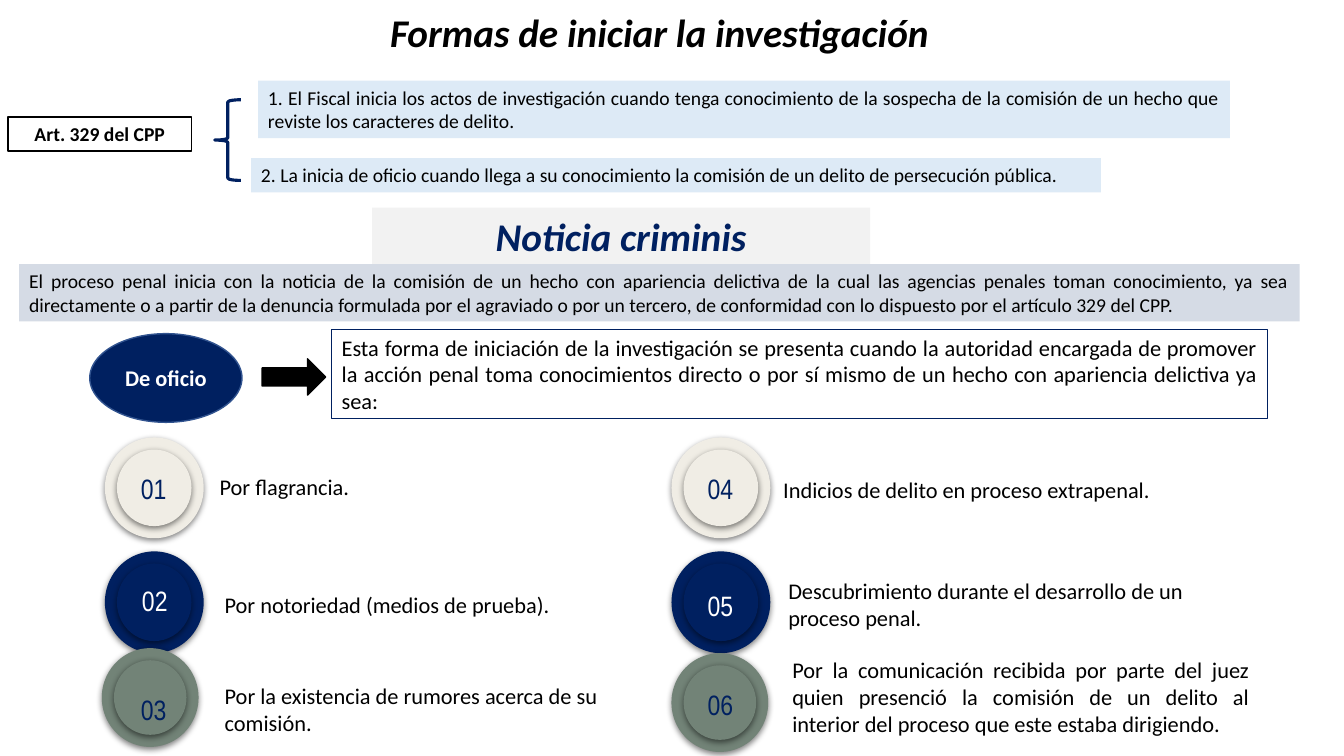
import pptx
import pptx.util
import pptx.dml.color
import pptx.enum.shapes
import pptx.enum.text
import pptx.oxml
import pptx.oxml.ns

Inches = pptx.util.Inches
SHAPE = pptx.enum.shapes.MSO_SHAPE
ALIGN = pptx.enum.text.PP_ALIGN
ANCHOR = pptx.enum.text.MSO_ANCHOR

COLORS = {
    "navy": "002060", "black": "000000", "white": "FFFFFF", "gray": "F2F2F2",
    "steel": "D5DBE5", "sky": "DDEAF6", "rim": "31538F", "cream": "F0EDE5",
    "sage": "728377",
}
BODY = {"name": "Calibri", "size": pptx.util.Pt(14)}
LARGE = {"name": "Calibri", "size": pptx.util.Pt(16)}
HEADING = {"name": "Calibri", "size": pptx.util.Pt(28), "bold": True, "italic": True}
NUMBER = {"name": "Arial Narrow", "size": pptx.util.Pt(20)}


def rgb(name):
    return pptx.dml.color.RGBColor.from_string(COLORS[name])


def write(sp, text, fmt, color="black", align=ALIGN.JUSTIFY, anchor=ANCHOR.TOP, inset=0.05):
    tf = sp.text_frame
    frame = {
        "word_wrap": True, "vertical_anchor": anchor,
        "margin_left": Inches(0.1), "margin_right": Inches(0.1),
        "margin_top": Inches(inset), "margin_bottom": Inches(inset),
    }
    for key, value in frame.items():
        setattr(tf, key, value)
    p = tf.paragraphs[0]
    p.alignment = align
    r = p.add_run()
    r.text = text
    for key, value in fmt.items():
        setattr(r.font, key, value)
    r.font.color.rgb = rgb(color)


def shape(s, kind, box, fill=None, line=None, weight=1):
    sp = s.shapes.add_shape(kind, *map(Inches, box))
    sp.shadow.inherit = False
    if fill:
        sp.fill.solid()
        sp.fill.fore_color.rgb = rgb(fill)
    else:
        sp.fill.background()
    if line:
        sp.line.color.rgb = rgb(line)
        sp.line.width = pptx.util.Pt(weight)
    else:
        sp.line.fill.background()
    return sp


def label(s, box, text, fmt, color="black", align=ALIGN.LEFT):
    sp = s.shapes.add_textbox(*map(Inches, box))
    write(sp, text, fmt, color, align, ANCHOR.MIDDLE, 0.1)


def title(s, x, y, w, h):
    sp = s.shapes.title
    place = {"left": x, "top": y, "width": w, "height": h}
    for key, value in place.items():
        setattr(sp, key, Inches(value))
    write(sp, "Formas de iniciar la investigación", HEADING, align=ALIGN.CENTER)


def article(s, x, y, w, h):
    sp = shape(s, SHAPE.RECTANGLE, (x, y + 0.36, 1.82, 0.34), "white", "black")
    write(sp, "Art. 329 del CPP", {**BODY, "bold": True}, align=ALIGN.CENTER)
    brace = shape(s, SHAPE.LEFT_BRACE, (x + 2.05, y + 0.19, 0.26, 0.8), None, "navy", 2.25)
    brace.adjustments[0] = 0.083
    sp = shape(s, SHAPE.RECTANGLE, (x + 2.48, y, w - 2.48, 0.57), "sky")
    write(sp, "1. El Fiscal inicia los actos de investigación cuando tenga conocimiento "
              "de la sospecha de la comisión de un hecho que reviste los caracteres de delito.", BODY)
    sp = shape(s, SHAPE.RECTANGLE, (x + 2.41, y + h - 0.34, 8.43, 0.34), "sky")
    write(sp, "2. La inicia de oficio cuando llega a su conocimiento la comisión "
              "de un delito de persecución pública.", BODY)


def notice(s, x, y, w, h):
    sp = shape(s, SHAPE.RECTANGLE, (x + 3.5, y, 4.94, 0.57), "gray")
    write(sp, "Noticia criminis", HEADING, "navy", ALIGN.CENTER)
    sp = shape(s, SHAPE.RECTANGLE, (x, y + h - 0.57, w, 0.57), "steel")
    write(sp, "El proceso penal inicia con la noticia de la comisión de un hecho con apariencia "
              "delictiva de la cual las agencias penales toman conocimiento, ya sea directamente "
              "o a partir de la denuncia formulada por el agraviado o por un tercero, de "
              "conformidad con lo dispuesto por el artículo 329 del CPP.", BODY)


def ex_officio(s, x, y, w, h):
    sp = shape(s, SHAPE.OVAL, (x, y + 0.04, 1.51, 0.88), "navy", "rim")
    write(sp, "De oficio", {**LARGE, "bold": True}, "white", ALIGN.CENTER, ANCHOR.MIDDLE)
    shape(s, SHAPE.RIGHT_ARROW, (x + 1.71, y + 0.29, 0.63, 0.36), "black", "black")
    sp = shape(s, SHAPE.RECTANGLE, (x + 2.4, y, w - 2.4, h), "white", "navy")
    write(sp, "Esta forma de iniciación de la investigación se presenta cuando la autoridad "
              "encargada de promover la acción penal toma conocimientos directo o por sí mismo "
              "de un hecho con apariencia delictiva ya sea:", LARGE, anchor=ANCHOR.MIDDLE)


def badge(s, x, y, w, h, fill):
    for inset in (0, 0.12):
        box = (x + inset, y + inset, w - 2 * inset, h - 2 * inset)
        sp = shape(s, SHAPE.OVAL, box, fill)
        effects = sp._element.spPr.find(pptx.oxml.ns.qn("a:effectLst"))
        effects.append(pptx.oxml.parse_xml(
            f'<a:outerShdw {pptx.oxml.ns.nsdecls("a")} blurRad="57150" dist="19050" '
            'dir="5400000" algn="ctr" rotWithShape="0">'
            f'<a:srgbClr val="{COLORS["black"]}"><a:alpha val="50000"/></a:srgbClr>'
            '</a:outerShdw>'))


def item(s, x, y, w, h, number, fill, ink, number_at, text_at, text_w, text, align):
    badge(s, x, y, w, h, fill)
    label(s, (x + number_at[0], y + number_at[1], 0.89, 0.43), number, NUMBER, ink, ALIGN.CENTER)
    label(s, (x + text_at[0], y + text_at[1], text_w, 0.58), text, LARGE, align=align)


def main():
    prs = pptx.Presentation()
    prs.slide_width, prs.slide_height = Inches(13.33), Inches(7.5)
    s = prs.slides.add_slide(prs.slide_layouts[5])
    title(s, 3.32, 0.03, 6.44, 0.57)
    article(s, 0.08, 0.8, 12.12, 1.11)
    notice(s, 0.19, 2.06, 12.7, 1.13)
    ex_officio(s, 0.89, 3.27, 11.68, 0.88)
    items = [
        (1.04, 4.34, 0.98, 1, "01", "cream", "navy", (0.04, 0.29), (1.04, 0.2), 4.32,
         "Por flagrancia.", ALIGN.JUSTIFY),
        (1.04, 5.47, 0.98, 1.01, "02", "navy", "white", (0.05, 0.27), (1.09, 0.24), 4.24,
         "Por notoriedad (medios de prueba).", ALIGN.JUSTIFY),
        (1.01, 6.43, 0.96, 0.98, "03", "sage", "navy", (0.07, 0.39), (1.12, 0.31), 4.39,
         "Por la existencia de rumores acerca de su comisión.", ALIGN.LEFT),
        (6.66, 4.34, 0.98, 1, "04", "cream", "navy", (0.04, 0.29), (1.01, 0.23), 4.73,
         "Indicios de delito en proceso extrapenal.", ALIGN.JUSTIFY),
        (6.66, 5.47, 0.98, 1.01, "05", "navy", "white", (0.04, 0.32), (1.06, 0.23), 4.73,
         "Descubrimiento durante el desarrollo de un proceso penal.", ALIGN.LEFT),
        (6.66, 6.48, 0.96, 0.98, "06", "sage", "navy", (0.04, 0.29), (1.1, 0.14), 4.73,
         "Por la comunicación recibida por parte del juez quien presenció la comisión de un "
         "delito al interior del proceso que este estaba dirigiendo.", ALIGN.JUSTIFY),
    ]
    for values in items:
        item(s, *values)
    prs.save("out.pptx")


if __name__ == "__main__":
    main()
